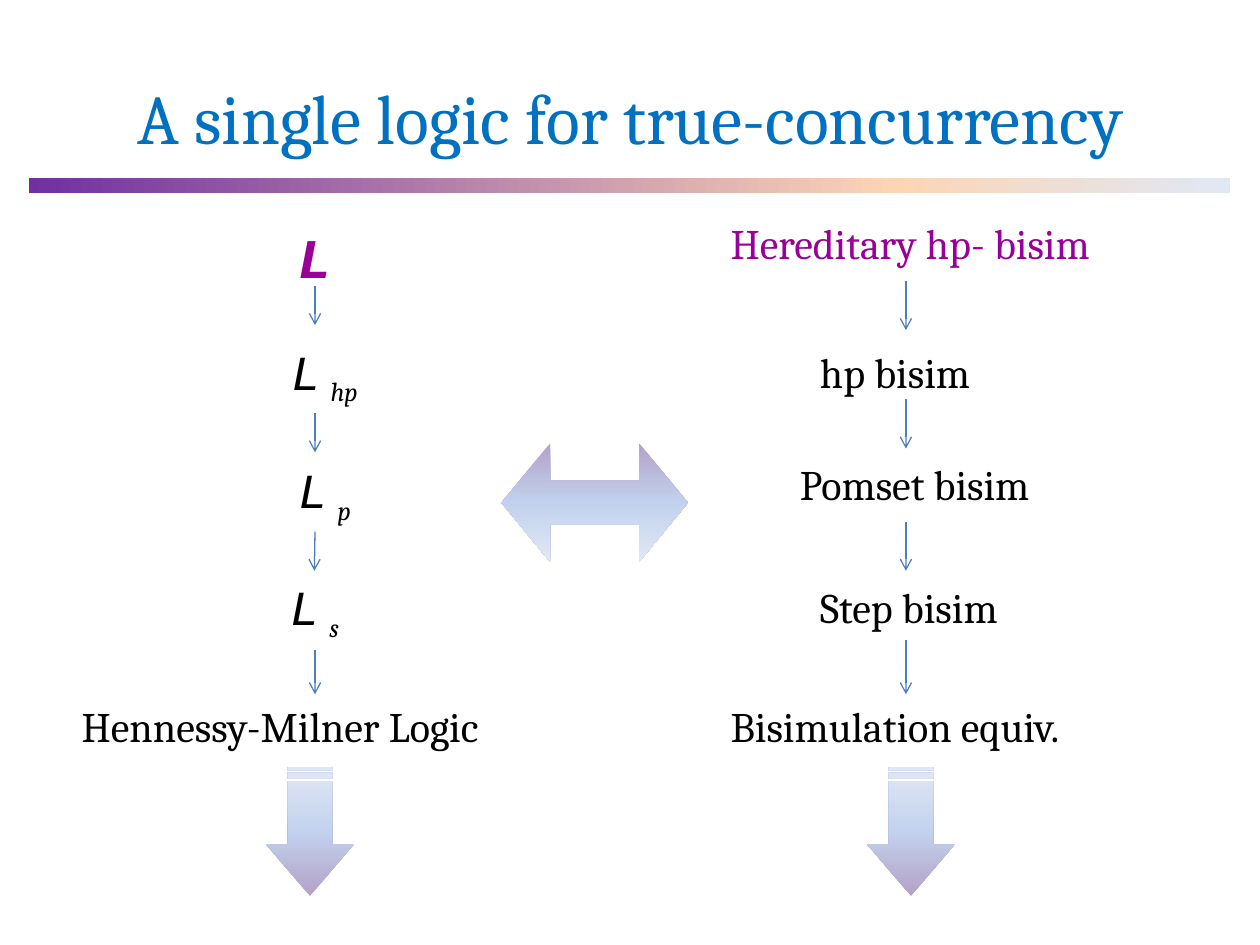
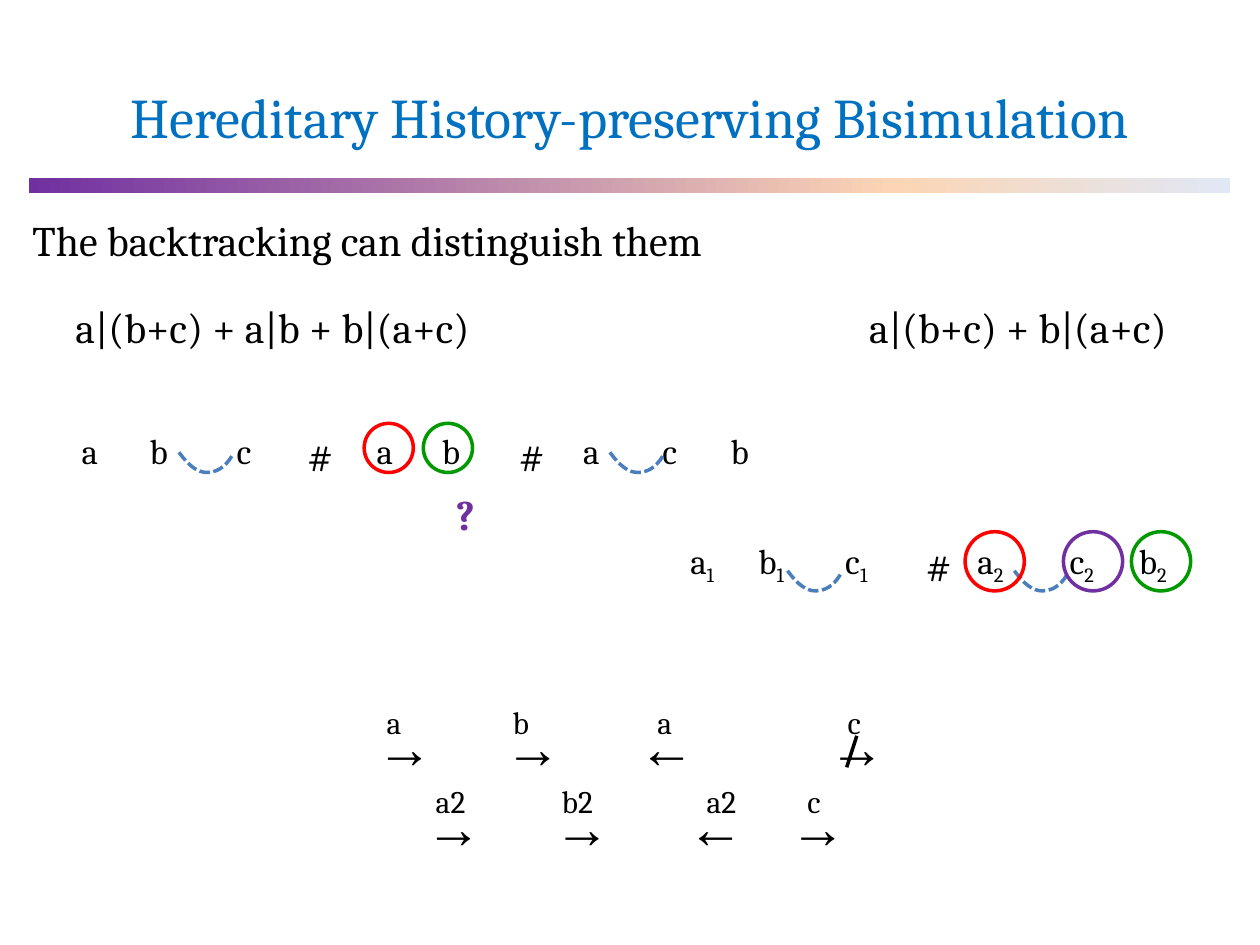
import collections

import lxml.etree
import pptx
import pptx.dml.color
import pptx.enum.dml
import pptx.enum.shapes
import pptx.enum.text
import pptx.oxml
import pptx.oxml.ns
import pptx.util

Inches = pptx.util.Inches
Pt = pptx.util.Pt
qn = pptx.oxml.ns.qn
SHAPE = pptx.enum.shapes.MSO_SHAPE
ALIGN = pptx.enum.text.PP_ALIGN

COLORS = {
    "title": "0070C0",
    "ink": "000000",
    "highlight": "990099",
    "violet": "7030A0",
    "peach": "FCD5B5",
    "mist": "E1E8F5",
    "lilac": "B3A2C7",
    "sky": "C2D1ED",
    "arrow": "4B7EBC",
    "red": "FF0000",
    "green": "009900",
}
BAND_STOPS = [(0, "violet"), (72, "peach"), (100, "mist")]
ARROW_STOPS = [(0, "lilac"), (50, "sky"), (100, "mist")]

Box = collections.namedtuple("Box", "left top width height")


def inside(box, left, top, width, height):
    return Box(box.left + left, box.top + top, width, height)


def rgb(name):
    return pptx.dml.color.RGBColor.from_string(COLORS[name])


def write(frame, content, size=24, font="Cambria", color="ink", bold=False,
          italic=False, align=ALIGN.LEFT, before=0, tab=None):
    paragraph = frame.paragraphs[0]
    paragraph.alignment = align
    paragraph.space_before = Pt(before)
    if tab:
        tabs = lxml.etree.SubElement(paragraph._p.get_or_add_pPr(), qn("a:tabLst"))
        lxml.etree.SubElement(tabs, qn("a:tab"), pos=str(Inches(tab)), algn="l")
    pieces = [(content, {})] if isinstance(content, str) else content
    for words, change in pieces:
        run = paragraph.add_run()
        run.text = words
        run.font.size = Pt(change.get("size", size))
        run.font.name = change.get("font", font)
        run.font.bold = bold
        run.font.italic = italic
        run.font.color.rgb = rgb(color)
        if change.get("sub"):
            run._r.get_or_add_rPr().set("baseline", "-25000")


def add_text(slide, box, content, wrap=False, **style):
    label = slide.shapes.add_textbox(*map(Inches, box))
    frame = label.text_frame
    frame.word_wrap = wrap
    if not wrap:
        frame.auto_size = pptx.enum.text.MSO_AUTO_SIZE.SHAPE_TO_FIT_TEXT
    write(frame, content, **style)
    return label


def add_gradient(slide, kind, box, stops, angle, rotation=0, adjustments=()):
    shape = slide.shapes.add_shape(kind, *map(Inches, box))
    shape.shadow.inherit = False
    shape.line.fill.background()
    shape.rotation = rotation
    for index, value in enumerate(adjustments):
        shape.adjustments[index] = value
    shape.fill.gradient()
    gradient = shape._element.spPr.find(qn("a:gradFill"))
    gradient.find(qn("a:lin")).set("ang", str(angle * 60000))
    stop_list = gradient.find(qn("a:gsLst"))
    for stop in list(stop_list):
        stop_list.remove(stop)
    for position, name in stops:
        stop = lxml.etree.SubElement(stop_list, qn("a:gs"), pos=str(position * 1000))
        lxml.etree.SubElement(stop, qn("a:srgbClr"), val=COLORS[name])


def add_line(slide, start, end, color="arrow", width=0.75, head=True):
    line = slide.shapes.add_connector(
        pptx.enum.shapes.MSO_CONNECTOR.STRAIGHT, *map(Inches, start + end))
    line.line.color.rgb = rgb(color)
    line.line.width = Pt(width)
    lxml.etree.SubElement(line._element.spPr, qn("a:effectLst"))
    if head:
        lxml.etree.SubElement(line.line._get_or_add_ln(), qn("a:tailEnd"), type="arrow")
    return line


def add_titled_slide(deck, heading, size):
    slide = deck.slides.add_slide(deck.slide_layouts[5])
    add_gradient(slide, SHAPE.RECTANGLE, Box(0.23, 1.41, 9.53, 0.12), BAND_STOPS, 0)
    title = slide.shapes.title
    title.left, title.top, title.width, title.height = map(Inches, (0.5, 0.3, 9, 1.25))
    title.text_frame.vertical_anchor = pptx.enum.text.MSO_ANCHOR.MIDDLE
    write(title.text_frame, heading, size=size, color="title", align=ALIGN.CENTER)
    return slide


def add_down_arrow(slide, box):
    add_gradient(slide, SHAPE.STRIPED_RIGHT_ARROW, box, ARROW_STOPS, 180, 90, (0.5, 0.588))


def logic_ladder(slide, box):
    add_text(slide, inside(box, 1.4, 0, 1.09, 0.7), "L", wrap=True, size=32,
             font="Courier New", color="highlight", bold=True, italic=True,
             align=ALIGN.CENTER, before=6.4)
    logics = {}
    for subscript, left, top in [("hp", 1.48, 0.94), ("p", 1.48, 1.88), ("s", 1.4, 2.81)]:
        pieces = [("L", {"size": 28, "font": "Courier New"}), (" ", {}),
                  (subscript, {"sub": True})]
        logics[subscript] = add_text(
            slide, inside(box, left, top, 1.09, 0.7), pieces, wrap=True, size=26,
            italic=True, align=ALIGN.CENTER, before=6)
    add_text(slide, inside(box, 0, 3.79, 3.67, 0.5), "Hennessy-Milner Logic")
    center = box.left + 1.95
    steps = [(0.55, 0.86), (1.56, 1.87), (2.5, 2.81), (3.44, 3.79)]
    arrows = [add_line(slide, (center, box.top + start), (center, box.top + end))
              for start, end in steps]
    arrows[2].end_connect(logics["s"], 0)
    add_down_arrow(slide, inside(box, 1.4, 4.53, 1.02, 0.7))


def bisimulation_ladder(slide, box):
    rungs = [
        ("Hereditary hp- bisim", 0, 0, 3.24, "highlight"),
        ("hp bisim", 0.71, 1.02, 1.46, "ink"),
        ("Pomset bisim", 0.55, 1.91, 2.16, "ink"),
        ("Step bisim", 0.71, 2.89, 1.72, "ink"),
        ("Bisimulation equiv.", 0, 3.83, 2.98, "ink"),
    ]
    labels = [add_text(slide, inside(box, left, top, width, 0.5), name, color=color)
              for name, left, top, width, color in rungs]
    center = box.left + 1.49
    steps = [(0.55, 0.94), (1.49, 1.88), (2.46, 2.85), (3.4, 3.83)]
    arrows = [add_line(slide, (center, box.top + start), (center, box.top + end))
              for start, end in steps]
    arrows[-1].end_connect(labels[-1], 0)
    add_down_arrow(slide, inside(box, 1.02, 4.57, 1.02, 0.7))


def add_conflict(slide, box):
    curves = [[(0, 0), (0.08, 0.11), (0.15, 0.16), (0.22, 0.16)],
              [(0.22, 0.16), (0.29, 0.16), (0.36, 0.13), (0.42, 0.03)]]
    points = []
    for curve in curves:
        for step in range(1, 9):
            t = step / 8
            weights = ((1 - t) ** 3, 3 * t * (1 - t) ** 2, 3 * t * t * (1 - t), t ** 3)
            x, y = (sum(w * point[axis] for w, point in zip(weights, curve))
                    for axis in (0, 1))
            points.append((Inches(box.left + x), Inches(box.top + y)))
    builder = slide.shapes.build_freeform(Inches(box.left), Inches(box.top))
    builder.add_line_segments(points, close=False)
    arc = builder.convert_to_shape()
    arc.shadow.inherit = False
    arc.fill.background()
    arc.line.color.rgb = rgb("arrow")
    arc.line.width = Pt(2)
    arc.line.dash_style = pptx.enum.dml.MSO_LINE.SQUARE_DOT
    lxml.etree.SubElement
    arc.line._get_or_add_ln().find(qn("a:prstDash")).set("val", "sysDash")


def add_circle(slide, box, color):
    circle = slide.shapes.add_shape(SHAPE.OVAL, *map(Inches, box))
    circle.shadow.inherit = False
    circle.fill.background()
    circle.line.color.rgb = rgb(color)
    circle.line.width = Pt(2)


def event_row(slide, box, events, conflicts, sums, circles, diameter, circle_top):
    for name, left, width in events:
        pieces = [(name[0], {})] + [(index, {"sub": True}) for index in name[1:]]
        add_text(slide, inside(box, left, 0, width, 0.44), pieces, size=20)
    for left in sums:
        add_text(slide, inside(box, left, 0, 0.39, 0.5), "#")
    for left, top in conflicts:
        add_conflict(slide, inside(box, left, top, 0.42, 0.16))
    for left, color in circles:
        add_circle(slide, inside(box, left, circle_top, diameter, diameter), color)


def transition_row(slide, box, transitions):
    for name, arrow, left, shift, width in transitions:
        add_text(slide, inside(box, left + shift, 0, width, 0.4), name, size=18)
        add_text(slide, inside(box, left, 0.08, 0.65 if arrow == "←" else 0.63, 0.64),
                 arrow, wrap=arrow == "→", size=32, font="Times New Roman")


def build_logic_slide(deck):
    slide = add_titled_slide(deck, "A single logic for true-concurrency", 40)
    logic_ladder(slide, Box(0.55, 1.72, 3.67, 5.23))
    bisimulation_ladder(slide, Box(5.7, 1.68, 3.24, 5.27))
    add_gradient(slide, SHAPE.LEFT_RIGHT_ARROW, Box(3.98, 3.52, 1.48, 0.94),
                 ARROW_STOPS, 90, adjustments=(0.366, 0.411))


def build_backtracking_slide(deck):
    slide = add_titled_slide(deck, "Hereditary History-preserving Bisimulation", 32)
    add_text(slide, Box(0.16, 1.65, 9, 0.7), "The backtracking can distinguish them",
             wrap=True, before=4.8)
    add_text(slide, Box(0.5, 2.34, 9, 0.78),
             "a|(b+c) + a|b + b|(a+c)\ta|(b+c) + b|(a+c)", wrap=True, before=6, tab=6.3)
    event_row(
        slide, Box(0.55, 3.36, 5.51, 0.5),
        events=[("a", 0, 0.36), ("b", 0.54, 0.36), ("c", 1.23, 0.34), ("a", 2.34, 0.36),
                ("b", 2.86, 0.36), ("a", 3.98, 0.36), ("c", 4.61, 0.34), ("b", 5.15, 0.36)],
        conflicts=[(0.87, 0.23), (4.29, 0.23)], sums=[1.79, 3.47],
        circles=[(2.34, "red"), (2.81, "green")], diameter=0.39, circle_top=0)
    add_text(slide, Box(3.52, 3.83, 0.41, 0.5), "?", color="violet", bold=True)
    event_row(
        slide, Box(5.38, 4.23, 4.07, 0.5),
        events=[("a1", 0, 0.39), ("b1", 0.54, 0.42), ("c1", 1.23, 0.39),
                ("a2", 2.28, 0.43), ("c2", 3.01, 0.42), ("b2", 3.56, 0.45)],
        conflicts=[(0.87, 0.3), (2.67, 0.3)], sums=[1.87],
        circles=[(2.28, "red"), (3.06, "violet"), (3.6, "green")],
        diameter=0.47, circle_top=-0.01)
    transition_row(slide, Box(2.89, 5.53, 4.22, 0.72), [
        ("a", "→", 0, 0.08, 0.34), ("b", "→", 1.02, 0.06, 0.34),
        ("a", "←", 2.08, 0.15, 0.34), ("c", "→", 3.59, 0.15, 0.33)])
    add_line(slide, (6.72, 6.09), (6.8, 5.84), color="ink", width=2, head=False)
    transition_row(slide, Box(3.28, 6.16, 3.52, 0.72), [
        ("a2", "→", 0, 0.08, 0.48), ("b2", "→", 1.02, 0.06, 0.48),
        ("a2", "←", 2.08, 0.15, 0.48), ("c", "→", 2.89, 0.14, 0.33)])


def main():
    deck = pptx.Presentation()
    deck.slide_width, deck.slide_height = Inches(10), Inches(7.5)
    build_logic_slide(deck)
    build_backtracking_slide(deck)
    deck.save("out.pptx")


if __name__ == "__main__":
    main()
